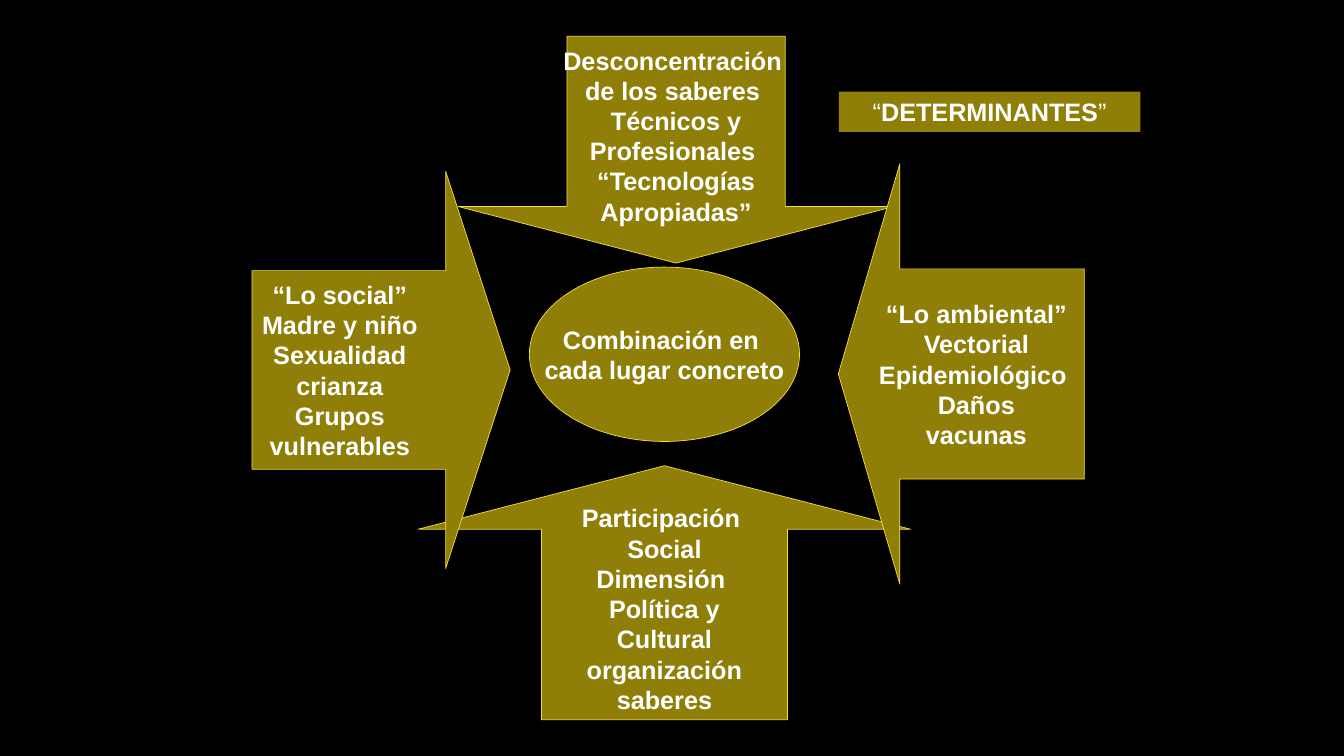
from pptx import Presentation
from pptx.dml.color import RGBColor
from pptx.enum.shapes import MSO_SHAPE
from pptx.enum.text import MSO_ANCHOR, MSO_AUTO_SIZE, PP_ALIGN
from pptx.util import Inches, Pt

BLACK = RGBColor(0x00, 0x00, 0x00)
OLIVE = RGBColor(0x8F, 0x7F, 0x08)
YELLOW = RGBColor(0xF4, 0xDE, 0x3A)
WHITE = RGBColor(0xFF, 0xFF, 0xFF)

PARTICIPATION = ["Participación ", "Social", "Dimensión ", "Política y", "Cultural",
                 "organización", "saberes"]
KNOWLEDGE = ["Desconcentración ", "de los saberes ", "Técnicos y", "Profesionales ",
             "“Tecnologías", "Apropiadas”"]
ENVIRONMENT = ["“Lo ambiental”", "Vectorial", "Epidemiológico ", "Daños", "vacunas"]
SOCIAL = ["“Lo social”", "Madre y niño", "Sexualidad", "crianza", "Grupos", "vulnerables"]
CENTRE = ["Combinación en ", "cada lugar concreto"]


def add_run(paragraph, text, bold=True):
    """Add one white run to a paragraph."""
    run = paragraph.add_run()
    run.text = text
    run.font.name = "Arial"
    run.font.size = Pt(18)
    run.font.bold = bold
    run.font.color.rgb = WHITE


def add_olive_shape(slide, kind, box):
    """Add an olive shape without outline or shadow."""
    shape = slide.shapes.add_shape(kind, *map(Inches, box))
    shape.shadow.inherit = False
    shape.fill.solid()
    shape.fill.fore_color.rgb = OLIVE
    shape.line.fill.background()
    return shape


def add_outlined_shape(slide, kind, box, lines):
    """Add an outlined shape with one centred paragraph per line."""
    shape = add_olive_shape(slide, kind, box)
    shape.line.color.rgb = YELLOW
    shape.line.width = Pt(0.5)
    frame = shape.text_frame
    frame.word_wrap = False
    frame.vertical_anchor = MSO_ANCHOR.MIDDLE
    for index, line in enumerate(lines):
        paragraph = frame.add_paragraph() if index else frame.paragraphs[0]
        paragraph.alignment = PP_ALIGN.CENTER
        add_run(paragraph, line)
    return shape


def add_arrow(slide, box, lines, rotation=0, text_turn=0, vertical=False):
    """Add a turned arrow whose text stays upright."""
    arrow = add_outlined_shape(slide, MSO_SHAPE.UP_ARROW, box, lines)
    arrow.adjustments[0] = 0.5
    arrow.adjustments[1] = 0.25
    arrow.rotation = rotation
    body = arrow.text_frame._txBody.bodyPr
    if text_turn:
        body.set("rot", str(text_turn * 60000))
    if vertical:
        body.set("vert", "eaVert")


def add_title(slide):
    """Add the title bar with its quoted bold word."""
    bar = add_olive_shape(slide, MSO_SHAPE.RECTANGLE, (8.32, 0.91, 2.99, 0.4))
    frame = bar.text_frame
    frame.word_wrap = True
    frame.auto_size = MSO_AUTO_SIZE.SHAPE_TO_FIT_TEXT
    frame.vertical_anchor = MSO_ANCHOR.TOP
    paragraph = frame.paragraphs[0]
    paragraph.alignment = PP_ALIGN.CENTER
    for text, bold in (("“", False), ("DETERMINANTES", True), ("”", False)):
        add_run(paragraph, text, bold)


def main():
    """Build the slide and save it."""
    presentation = Presentation()
    presentation.slide_width = Inches(13.33)
    presentation.slide_height = Inches(7.5)
    slide = presentation.slides.add_slide(presentation.slide_layouts[6])
    slide.background.fill.solid()
    slide.background.fill.fore_color.rgb = BLACK
    add_arrow(slide, (4.15, 4.62, 4.88, 2.52), PARTICIPATION)
    add_arrow(slide, (4.54, 0.36, 4.33, 2.25), KNOWLEDGE, 180, text_turn=180)
    add_arrow(slide, (7.45, 2.49, 4.17, 2.44), ENVIRONMENT, 270, vertical=True)
    add_arrow(slide, (1.81, 2.39, 3.94, 2.56), SOCIAL, 90, text_turn=180, vertical=True)
    add_outlined_shape(slide, MSO_SHAPE.OVAL, (5.25, 2.65, 2.68, 1.73), CENTRE)
    add_title(slide)
    presentation.save("out.pptx")


if __name__ == "__main__":
    main()
